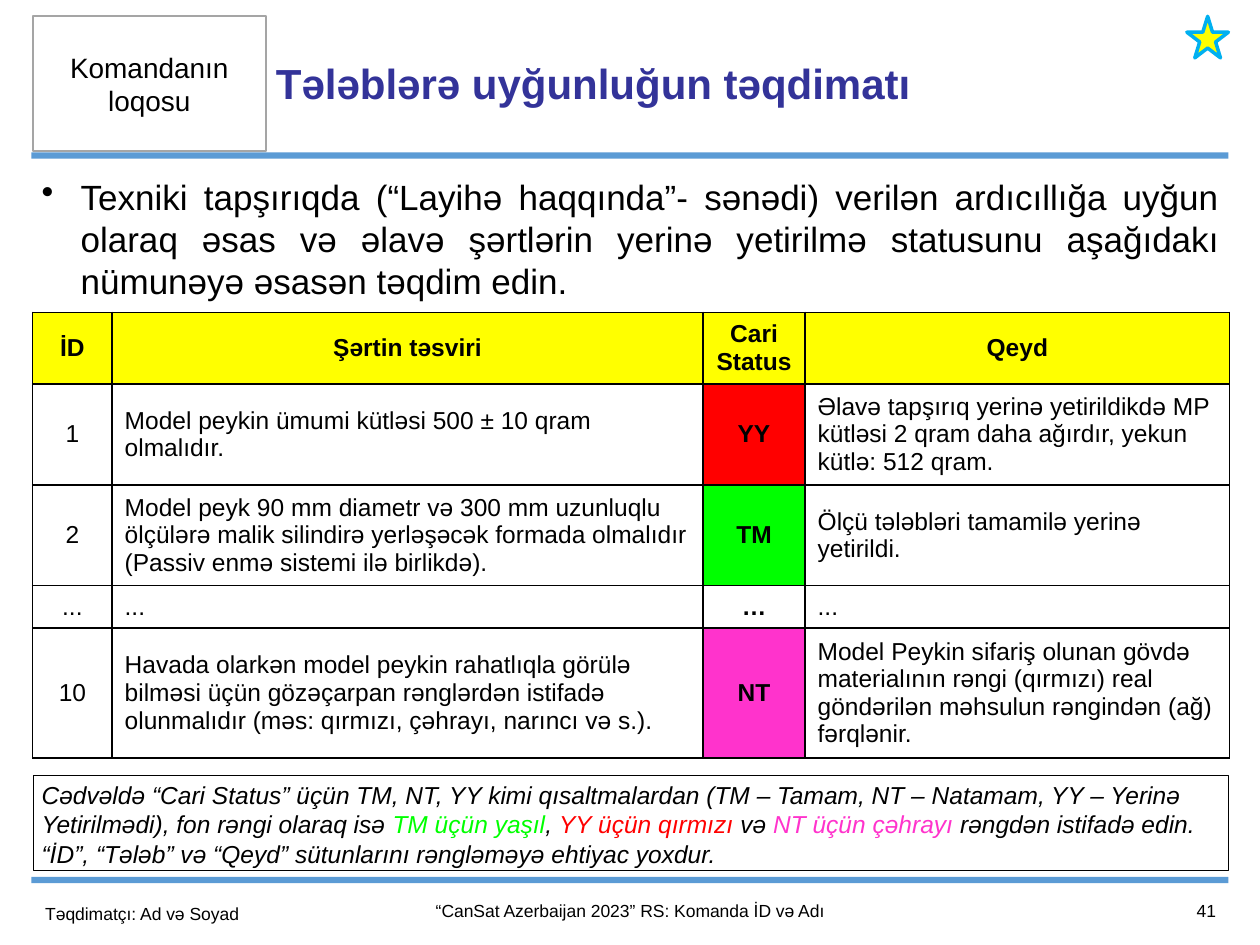
from lxml import etree
from pptx import Presentation
from pptx.dml.color import RGBColor
from pptx.enum.shapes import MSO_SHAPE
from pptx.enum.text import MSO_ANCHOR, PP_ALIGN
from pptx.oxml.ns import qn
from pptx.util import Inches, Pt

LEFT, CENTER, RIGHT, JUSTIFY = PP_ALIGN.LEFT, PP_ALIGN.CENTER, PP_ALIGN.RIGHT, PP_ALIGN.JUSTIFY
TOP, MIDDLE = MSO_ANCHOR.TOP, MSO_ANCHOR.MIDDLE
RECTANGLE, STAR = MSO_SHAPE.RECTANGLE, MSO_SHAPE.STAR_5_POINT

FONT = "Arial"
BLACK = RGBColor(0x00, 0x00, 0x00)
WHITE = RGBColor(0xFF, 0xFF, 0xFF)
GRAY = RGBColor(0xA5, 0xA5, 0xA5)
BLUE = RGBColor(0x5B, 0x9B, 0xD5)
SKY = RGBColor(0x00, 0xB0, 0xF0)
NAVY = RGBColor(0x33, 0x33, 0x99)
YELLOW = RGBColor(0xFF, 0xFF, 0x00)
RED = RGBColor(0xFF, 0x00, 0x00)
GREEN = RGBColor(0x00, 0xFF, 0x00)
PINK = RGBColor(0xFF, 0x33, 0xCC)

# Content
TITLE = "Tələblərə uyğunluğun təqdimatı"
LOGO_LABEL = "Komandanın loqosu"
INSTRUCTION = (
    "Texniki tapşırıqda (“Layihə haqqında”- sənədi) verilən ardıcıllığa uyğun olaraq "
    "əsas və əlavə şərtlərin yerinə yetirilmə statusunu aşağıdakı nümunəyə əsasən təqdim edin."
)
HEADER = ("İD", "Şərtin təsviri", "Cari Status", "Qeyd")
REQUIREMENTS = [
    ("1", "Model peykin ümumi kütləsi 500 ± 10 qram olmalıdır.", "YY",
     "Əlavə tapşırıq yerinə yetirildikdə MP kütləsi 2 qram daha ağırdır, yekun kütlə: 512 qram."),
    ("2", "Model peyk 90 mm diametr və 300 mm uzunluqlu ölçülərə malik silindirə yerləşəcək "
     "formada olmalıdır (Passiv enmə sistemi ilə birlikdə).", "TM",
     "Ölçü tələbləri tamamilə yerinə yetirildi."),
    ("...", "...", "…", "..."),
    ("10", "Havada olarkən model peykin rahatlıqla görülə bilməsi üçün gözəçarpan rənglərdən "
     "istifadə olunmalıdır (məs: qırmızı, çəhrayı, narıncı və s.).", "NT",
     "Model Peykin sifariş olunan gövdə materialının rəngi (qırmızı) real göndərilən "
     "məhsulun rəngindən (ağ) fərqlənir."),
]
STATUS_COLORS = {"YY": RED, "TM": GREEN, "NT": PINK}
COLUMN_WIDTHS = (0.63, 4.69, 0.81, 3.37)
ROW_HEIGHTS = (0.54, 0.76, 0.76, 0.32, 0.97)
STATUS_COLUMN = 2
NOTE = [
    ("Cədvəldə “Cari Status” üçün TM, NT, YY kimi qısaltmalardan (TM – Tamam, NT – Natamam, "
     "YY – Yerinə Yetirilmədi), fon rəngi olaraq isə ", BLACK),
    ("TM üçün yaşıl", GREEN),
    (", ", BLACK),
    ("YY üçün qırmızı ", RED),
    ("və ", BLACK),
    ("NT üçün çəhrayı ", PINK),
    ("rəngdən istifadə edin. “İD”, “Tələb” və “Qeyd” sütunlarını rəngləməyə ehtiyac yoxdur.", BLACK),
]
FOOTERS = [
    ("Təqdimatçı: Ad və Soyad", (0.26, 7.05, 2.39, 0.4), LEFT),
    ("“CanSat Azerbaijan 2023” RS: Komanda İD və Adı", (2.65, 7.03, 4.7, 0.4), CENTER),
    ("41", (8.75, 7.03, 1, 0.4), RIGHT),
]
TIGHT = (0.07, 0.04)
NORMAL = (0.1, 0.05)


def write(frame, text, size=14, color=BLACK, bold=False, italic=False,
          align=LEFT, anchor=TOP, margins=NORMAL, bullet_indent=None):
    """Fill a text frame with a string, or with a list of (text, colour) runs."""
    frame.word_wrap = True
    frame.vertical_anchor = anchor
    frame.margin_left = frame.margin_right = Inches(margins[0])
    frame.margin_top = frame.margin_bottom = Inches(margins[1])
    paragraph = frame.paragraphs[0]
    paragraph.alignment = align
    if bullet_indent:
        properties = paragraph._p.get_or_add_pPr()
        properties.set("marL", str(Inches(bullet_indent)))
        properties.set("indent", str(-Inches(bullet_indent)))
        etree.SubElement(properties, qn("a:buChar")).set("char", "•")
    for run_text, run_color in [(text, color)] if isinstance(text, str) else text:
        run = paragraph.add_run()
        run.text = run_text
        run.font.name = FONT
        run.font.size = Pt(size)
        run.font.bold = bold
        run.font.italic = italic
        run.font.color.rgb = run_color


def add_box(slide, kind, place, fill, line=None, width=1):
    shape = slide.shapes.add_shape(kind, *map(Inches, place))
    shape.shadow.inherit = False
    shape.fill.solid()
    shape.fill.fore_color.rgb = fill
    if line is None:
        shape.line.fill.background()
    else:
        shape.line.color.rgb = line
        shape.line.width = Pt(width)
    return shape


def add_text(slide, place, text, **style):
    write(slide.shapes.add_textbox(*map(Inches, place)).text_frame, text, **style)


def add_borders(cell):
    properties = cell._tc.get_or_add_tcPr()
    for index, side in enumerate(("lnL", "lnR", "lnT", "lnB")):
        line = etree.Element(qn("a:" + side), w=str(Pt(1)))
        fill = etree.SubElement(line, qn("a:solidFill"))
        etree.SubElement(fill, qn("a:srgbClr")).set("val", str(BLACK))
        properties.insert(index, line)


def add_requirements_table(slide):
    rows = [HEADER] + REQUIREMENTS
    place = (0.26, 2.48, sum(COLUMN_WIDTHS), sum(ROW_HEIGHTS))
    table = slide.shapes.add_table(len(rows), len(HEADER), *map(Inches, place)).table
    for column, width in zip(table.columns, COLUMN_WIDTHS):
        column.width = Inches(width)
    for row, height in zip(table.rows, ROW_HEIGHTS):
        row.height = Inches(height)
    for r, texts in enumerate(rows):
        for c, text in enumerate(texts):
            cell = table.cell(r, c)
            is_header = r == 0
            centered = is_header or c in (0, STATUS_COLUMN)
            write(cell.text_frame, text, bold=is_header or c == STATUS_COLUMN,
                  align=CENTER if centered else LEFT)
            cell.vertical_anchor = MIDDLE
            cell.margin_left = cell.margin_right = Inches(NORMAL[0])
            cell.margin_top = cell.margin_bottom = Inches(NORMAL[1])
            cell.fill.solid()
            cell.fill.fore_color.rgb = YELLOW if is_header else STATUS_COLORS.get(text, WHITE)
            add_borders(cell)


def main():
    presentation = Presentation()
    presentation.slide_width, presentation.slide_height = Inches(10), Inches(7.5)
    slide = presentation.slides.add_slide(presentation.slide_layouts[5])

    # Rules and team logo frame
    for top in (1.21, 6.96):
        add_box(slide, RECTANGLE, (0.25, top, 9.5, 0.05), BLUE)
    logo = add_box(slide, RECTANGLE, (0.26, 0.13, 1.85, 1.07), WHITE, GRAY)
    write(logo.text_frame, LOGO_LABEL, size=16, align=CENTER, anchor=MIDDLE)

    # Title and instruction
    title = slide.shapes.title
    title.left, title.top, title.width, title.height = map(Inches, (2.12, 0.13, 6, 1.06))
    write(title.text_frame, TITLE, size=24, color=NAVY, bold=True, anchor=MIDDLE, margins=TIGHT)
    add_text(slide, (0.26, 1.35, 9.49, 1.1), INSTRUCTION, size=20, align=JUSTIFY,
             margins=TIGHT, bullet_indent=0.31)

    # Requirements table and colour note
    add_requirements_table(slide)
    note = add_box(slide, RECTANGLE, (0.26, 6.15, 9.49, 0.76), WHITE, BLACK, 0.25)
    write(note.text_frame, NOTE, italic=True, margins=TIGHT)

    # Footer and star
    for text, place, align in FOOTERS:
        add_text(slide, place, text, size=10, align=align, anchor=MIDDLE)
    star = add_box(slide, STAR, (9.42, 0.13, 0.33, 0.33), YELLOW, SKY, 2)
    star.adjustments[0] = 0.191

    presentation.save("out.pptx")


if __name__ == "__main__":
    main()
